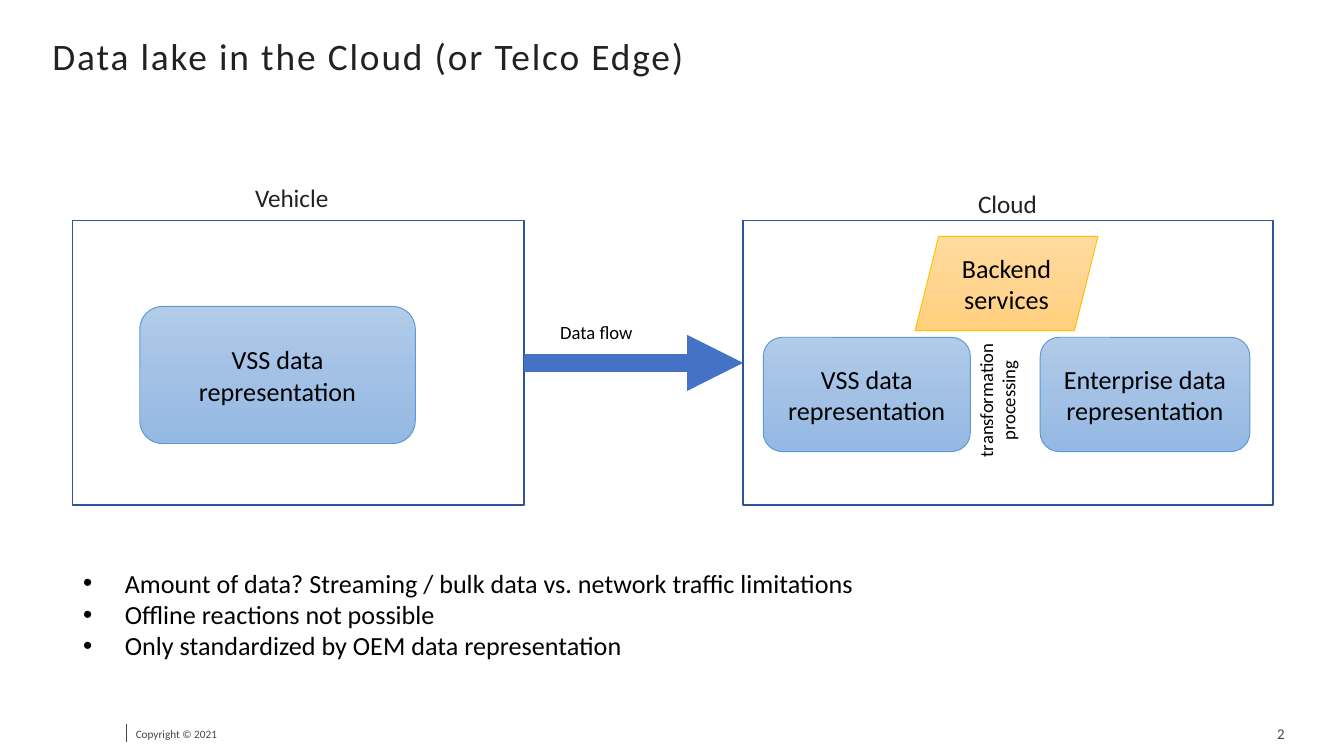
"""Build the slide on a data lake in the cloud, laid out on a grid of tenth-inch cells."""
import lxml.etree
import pptx
import pptx.dml.color
import pptx.enum.shapes
import pptx.enum.text
import pptx.oxml.ns
import pptx.util

SHAPE = pptx.enum.shapes.MSO_SHAPE
ALIGN = pptx.enum.text.PP_ALIGN
ANCHOR = pptx.enum.text.MSO_ANCHOR
FIT = pptx.enum.text.MSO_AUTO_SIZE

COLUMNS = 100
THEME = {
    "font": "Calibri",
    "black": "000000", "heading": "222222", "footer": "464547",
    "frame": "2F5597", "flow": "4472C4",
    "data": ("B1CBE9", "A3C1E5", "93B9E4", "5B9BD5"),
    "service": ("FFDB9E", "FFD590", "FFD07C", "FFC000"),
    "title_size": 20, "body_size": 14, "label_size": 13.5,
    "small_size": 10, "number_size": 8, "footer_size": 6,
    "frame_width": 1, "block_width": 0.5, "rule_width": 0.25, "flow_width": 10,
}

FRAME_TOP, FRAME_HEIGHT = 16.4, 21.2
VEHICLE_LEFT, VEHICLE_WIDTH = 5.4, 33.6
CLOUD_LEFT, CLOUD_WIDTH = 55.3, 39.4
FLOW_ROW = FRAME_TOP + FRAME_HEIGHT / 2
FRAMES = [(VEHICLE_LEFT, VEHICLE_WIDTH), (CLOUD_LEFT, CLOUD_WIDTH)]
BLOCKS = [
    (SHAPE.ROUNDED_RECTANGLE, "data", (10.4, 22.8, 20.5, 10.2), ["VSS data\nrepresentation"]),
    (SHAPE.ROUNDED_RECTANGLE, "data", (56.8, 25.1, 15.4, 8.5), ["VSS data\nrepresentation"]),
    (SHAPE.ROUNDED_RECTANGLE, "data", (77.4, 25.1, 15.6, 8.5), ["Enterprise data", "representation"]),
    (SHAPE.PARALLELOGRAM, "service", (68.1, 17.6, 13.6, 7), ["Backend services"]),
]
LABELS = [
    ("Vehicle", (18, 13.1, 9.3, 4), "label_size", "heading"),
    ("Cloud", (71.8, 13.5, 9.3, 4), "label_size", "heading"),
    ("Data flow", (40.7, 23.4, 7.5, 2.7), "small_size", "black"),
]
PROCESSING = ["transformation", "processing"]
BULLETS = [
    "Amount of data? Streaming / bulk data vs. network traffic limitations",
    "Offline reactions not possible",
    "Only standardized by OEM data representation",
]
FOOTERS = [
    ("Copyright © 2021", (9.4, 53.6, 14.5, 2), "footer_size", ALIGN.LEFT, 0),
    ("2", (80.2, 53.6, 16.1, 2), "number_size", ALIGN.RIGHT, 0.1),
]

deck = pptx.Presentation()
deck.slide_width = pptx.util.Inches(10)
deck.slide_height = deck.slide_width * 9 // 16
slide = deck.slides.add_slide(deck.slide_layouts[6])


def color(value):
    return pptx.dml.color.RGBColor.from_string(value)


def place(cells):
    return [round(cell * deck.slide_width / COLUMNS) for cell in cells]


def write(shape, paragraphs, size, ink, align=ALIGN.LEFT, bullet=False, spacing=0):
    frame = shape.text_frame
    for index, text in enumerate(paragraphs):
        para = frame.add_paragraph() if index else frame.paragraphs[0]
        para.alignment = align
        if bullet:
            properties = para._p.get_or_add_pPr()
            indent = pptx.util.Inches(0.31)
            properties.set("marL", str(indent))
            properties.set("indent", str(-indent))
            lxml.etree.SubElement(properties, pptx.oxml.ns.qn("a:buFont"), typeface="Arial")
            lxml.etree.SubElement(properties, pptx.oxml.ns.qn("a:buChar"), char="•")
        for number, line in enumerate(text.split("\n")):
            if number:
                para.add_line_break()
            span = para.add_run()
            span.text = line
            span.font.name = THEME["font"]
            span.font.size = pptx.util.Pt(THEME[size])
            span.font.color.rgb = color(THEME[ink])
            if spacing:
                span.font._element.set("spc", str(round(spacing * 100)))


def add_text(cells, paragraphs, size, ink, wrap=True, insets=None, fit=FIT.SHAPE_TO_FIT_TEXT, **style):
    box = slide.shapes.add_textbox(*place(cells))
    frame = box.text_frame
    frame.word_wrap = wrap
    frame.auto_size = fit
    if insets:
        frame.margin_left = frame.margin_right = pptx.util.Inches(insets[0])
        frame.margin_top = frame.margin_bottom = pptx.util.Inches(insets[1])
    write(box, paragraphs, size, ink, **style)
    return box


def add_block(kind, cells, line, width):
    block = slide.shapes.add_shape(kind, *place(cells))
    block.shadow.inherit = False
    block.line.color.rgb = color(line)
    block.line.width = pptx.util.Pt(width)
    return block


def add_line(start, end, ink, width):
    line = slide.shapes.add_connector(
        pptx.enum.shapes.MSO_CONNECTOR.STRAIGHT, *place(start + end))
    line.line.color.rgb = color(THEME[ink])
    line.line.width = pptx.util.Pt(THEME[width])
    lxml.etree.SubElement(line._element.spPr, pptx.oxml.ns.qn("a:effectLst"))
    return line


def shade(block, stops):
    block.fill.gradient()
    block.fill.gradient_angle = 270
    first, last = block.fill.gradient_stops
    first.color.rgb, last.color.rgb = color(stops[0]), color(stops[2])
    first.position, last.position = 0, 1
    middle = lxml.etree.Element(pptx.oxml.ns.qn("a:gs"), pos="50000")
    lxml.etree.SubElement(middle, pptx.oxml.ns.qn("a:srgbClr"), val=stops[1])
    first._gs.addnext(middle)


for text, cells, size, align, spacing in FOOTERS:
    footer = add_text(cells, [text], size, "footer", insets=(0.07, 0.04), fit=FIT.NONE,
                      align=align, spacing=spacing)
    footer.text_frame.vertical_anchor = ANCHOR.MIDDLE
add_line((9.4, 53.9), (9.4, 55.2), "footer", "rule_width")

add_text((3.9, 2.5, 92.2, 3.4), ["Data lake in the Cloud (or Telco Edge)"],
         "title_size", "heading", insets=(0, 0), spacing=1)

for left, width in FRAMES:
    frame_box = add_block(SHAPE.RECTANGLE, (left, FRAME_TOP, width, FRAME_HEIGHT),
                          THEME["frame"], THEME["frame_width"])
    frame_box.fill.background()

flow = add_line((VEHICLE_LEFT + VEHICLE_WIDTH, FLOW_ROW), (CLOUD_LEFT, FLOW_ROW), "flow", "flow_width")
lxml.etree.SubElement(flow.line._get_or_add_ln(), pptx.oxml.ns.qn("a:tailEnd"), type="triangle")

for kind, palette, cells, paragraphs in BLOCKS:
    *stops, outline = THEME[palette]
    block = add_block(kind, cells, outline, THEME["block_width"])
    shade(block, stops)
    block.text_frame.word_wrap = True
    block.text_frame.vertical_anchor = ANCHOR.MIDDLE
    write(block, paragraphs, "body_size", "black", align=ALIGN.CENTER)

processing = add_text((72, 25.4, 5.4, 9.6), PROCESSING, "small_size", "black",
                      wrap=False, align=ALIGN.CENTER)
processing.rotation = 180
processing.text_frame._txBody.bodyPr.set("vert", "eaVert")

add_text((5.2, 41.7, 61.1, 8.1), BULLETS, "body_size", "black", wrap=False, bullet=True)
for text, cells, size, ink in LABELS:
    add_text(cells, [text], size, ink, wrap=text != "Data flow")

deck.save("out.pptx")
